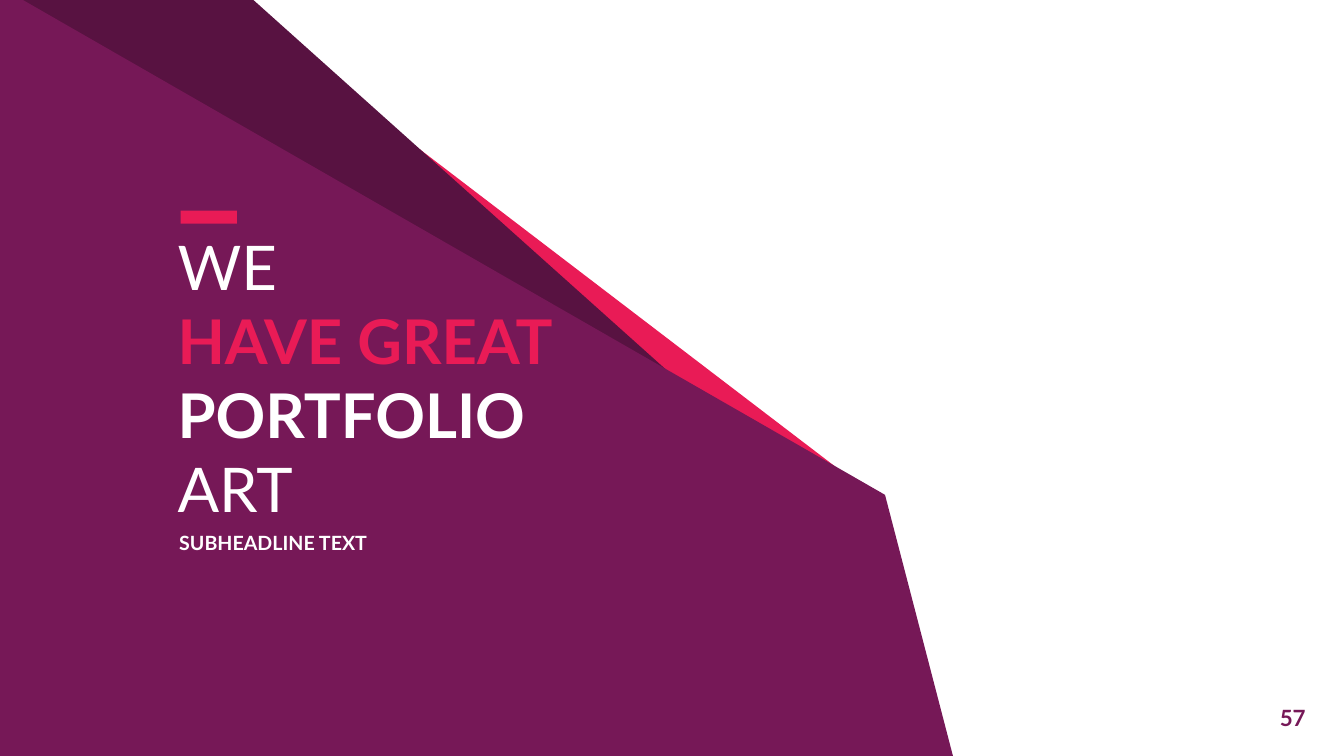
from pptx import Presentation
from pptx.dml.color import RGBColor as RGB
from pptx.enum.shapes import MSO_SHAPE as SHAPE
from pptx.enum.text import MSO_ANCHOR as ANCHOR, MSO_AUTO_SIZE as FIT, PP_ALIGN as ALIGN
from pptx.util import Pt

WIDTH, HEIGHT = 960, 540
COLORS = {"white": "FFFFFF", "plum": "761857", "dark": "581241", "red": "E91B56"}


def paint(shape, color):
    shape.fill.solid()
    shape.fill.fore_color.rgb = RGB.from_string(COLORS[color])
    shape.line.fill.background()
    shape.shadow.inherit = False


def place(shape, box):
    shape.left, shape.top, shape.width, shape.height = map(Pt, box)


def write(shape, lines, size=14, align=ALIGN.LEFT, wrap=True):
    """Fill a shape with lines given as (text, color, bold)."""
    frame = shape.text_frame
    frame.word_wrap = wrap
    frame.auto_size = FIT.NONE
    frame.vertical_anchor = ANCHOR.TOP
    for i, (text, color, bold) in enumerate(lines):
        para = frame.add_paragraph() if i else frame.paragraphs[0]
        para.alignment = align
        run = para.add_run()
        run.text = text
        font = run.font
        font.name, font.size, font.bold = "Lato", Pt(size), bold
        font.color.rgb = RGB.from_string(COLORS[color])


def label(slide, box, text, color, **style):
    shape = slide.shapes.add_textbox(*map(Pt, box))
    write(shape, [(text, color, True)], **style)


def facets(slide, box):
    """Layer the angular panels, back to front."""
    left, top, width, height = box
    panels = [
        ("red", [(296, 103.7), (597.5, 334), (412.5, 265.7)]),
        ("dark", [(0, 0), (181, 0), (484, 271.4), (0, 47.6)]),
        ("plum", [(0, 0), (16.4, 0), (632.2, 353.5), (680.7, height), (0, height)]),
    ]
    for color, points in panels:
        start, *rest = [(Pt(left + x), Pt(top + y)) for x, y in points]
        outline = slide.shapes.build_freeform(*start)
        outline.add_line_segments(rest, close=True)
        paint(outline.convert_to_shape(), color)


def heading(slide, box):
    left, top, width, height = box
    title = slide.shapes.title
    slide.shapes.element.append(title.element)  # in front of the panels
    place(title, (left, top + 9.5, width, 220))
    write(title, [
        ("WE", "white", False),
        ("HAVE GREAT", "red", True),
        ("PORTFOLIO", "white", True),
        ("ART", "white", False),
    ], size=44)
    bar = slide.shapes.add_shape(
        SHAPE.RECTANGLE, Pt(left + 9.5), Pt(top), Pt(40.2), Pt(9.2))
    paint(bar, "red")
    label(slide, (left + 1.3, top + 225.3, width, 24.5), "SUBHEADLINE TEXT", "white")


def main():
    deck = Presentation()
    deck.slide_width, deck.slide_height = Pt(WIDTH), Pt(HEIGHT)
    slide = deck.slides.add_slide(deck.slide_layouts.get_by_name("Title Only"))
    facets(slide, (0, 0, WIDTH, HEIGHT))
    heading(slide, (119.6, 150.5, 358.6, 250))
    label(slide, (906.5, 499.7, 33.8, 26.6), "57", "plum",
          size=16, align=ALIGN.CENTER, wrap=False)
    deck.save("out.pptx")


if __name__ == "__main__":
    main()
